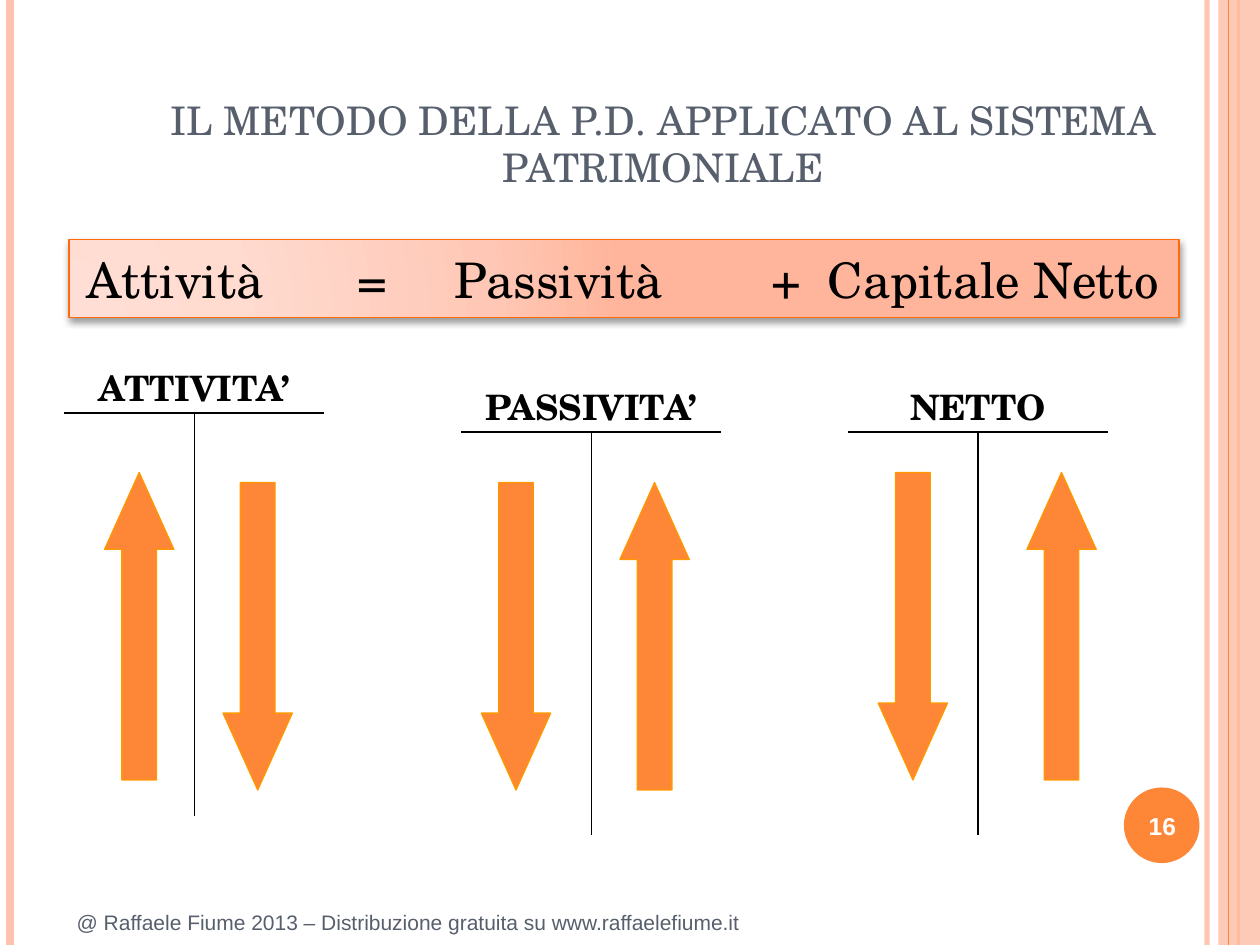
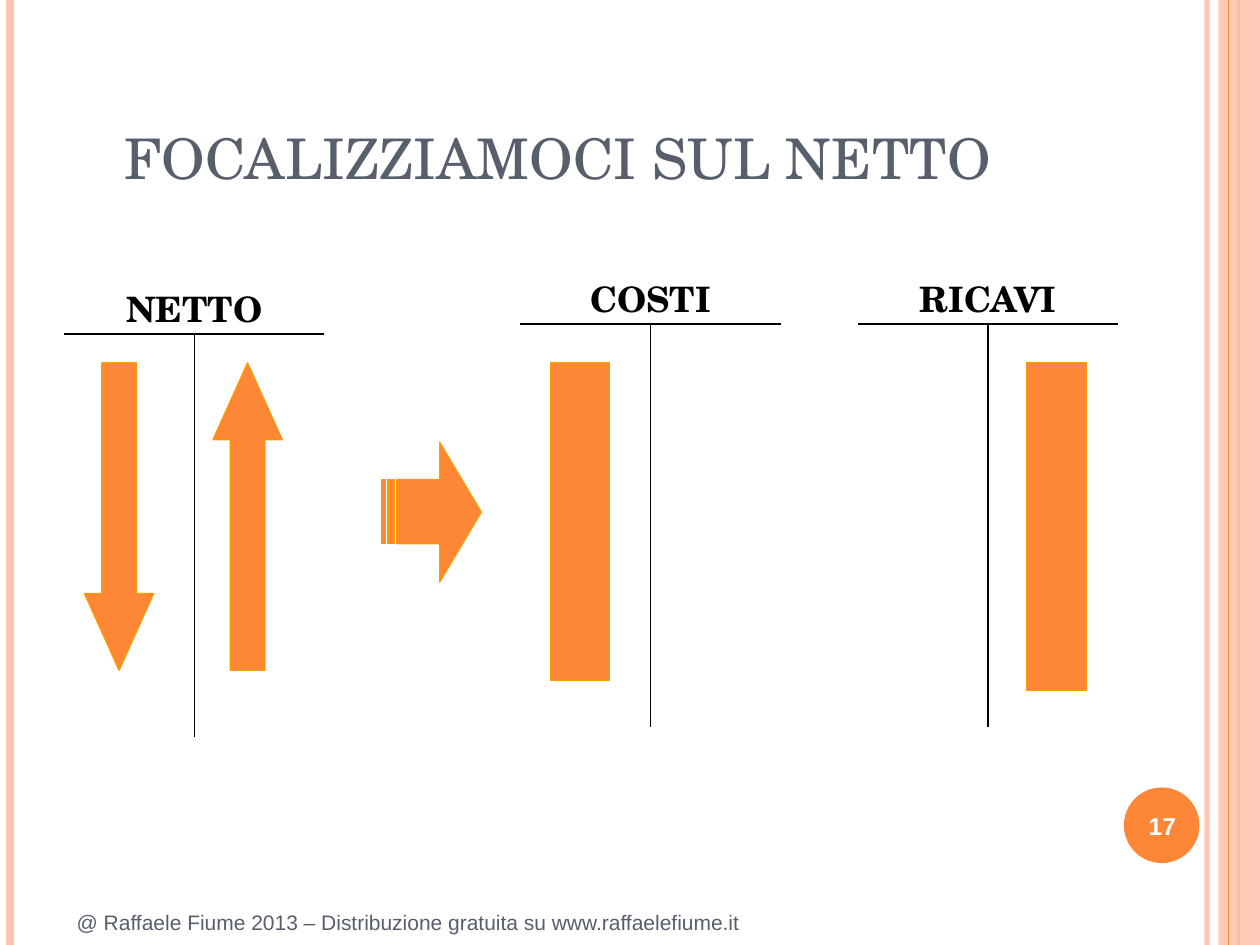
import pptx
import pptx.util
import pptx.dml.color
import pptx.enum.shapes
import pptx.enum.text
import pptx.oxml
import pptx.oxml.ns
from lxml import etree

RGB = pptx.dml.color.RGBColor
Pt = pptx.util.Pt
Form = pptx.enum.shapes.MSO_SHAPE
Align = pptx.enum.text.PP_ALIGN
Anchor = pptx.enum.text.MSO_ANCHOR
qn = pptx.oxml.ns.qn

PEACH = RGB(0xFE, 0xC3, 0xAE)
ORANGE = RGB(0xFE, 0x86, 0x37)
AMBER = RGB(0xFF, 0x99, 0x00)
FLAME = RGB(0xFF, 0x6B, 0x0A)
SLATE = RGB(0x57, 0x5F, 0x6D)
BLACK = RGB(0, 0, 0)
WHITE = RGB(255, 255, 255)
BLUSH = [(0, "FFDED5"), (30, "FFDBD0"), (75, "FFC8B6"), (100, "FFB59B")]

SERIF = "TeX Gyre Schola"
SANS = "Arial"
COLS, ROWS = 100, 75
BARE = "{2D5ABB26-0587-4C30-8999-92F81FD0307C}"
FOOT = "@ Raffaele Fiume 2013 – Distribuzione gratuita su www.raffaelefiume.it"
RULES = [(95.8, PEACH, 3, 93), (0.8, PEACH, 4.5, 100), (98.3, ORANGE, 1.5, 100)]


def node(tag, body="", **attrs):
    pairs = "".join(f' {key}="{val}"' for key, val in attrs.items())
    return pptx.oxml.parse_xml(f"<a:{tag} {pptx.oxml.ns.nsdecls('a')}{pairs}>{body}</a:{tag}>")


def fade(host, share):
    tint = host.find(".//" + qn("a:srgbClr"))
    tint.append(node("alpha", val=share * 1000))


class Deck:
    def __init__(self):
        self.prs = pptx.Presentation()
        self.prs.slide_width = pptx.util.Inches(10)
        self.prs.slide_height = pptx.util.Inches(7.5)
        self.slide = None

    def x(self, cols):
        return round(self.prs.slide_width * cols / COLS)

    def y(self, rows):
        return round(self.prs.slide_height * rows / ROWS)

    def area(self, left, top, wide, high):
        return self.x(left), self.y(top), self.x(wide), self.y(high)

    def style(self, frame, text, size, font, color, bold=False, align=Align.LEFT, anchor=Anchor.MIDDLE):
        frame.word_wrap = True
        frame.vertical_anchor = anchor
        frame.text = text
        para = frame.paragraphs[0]
        para.alignment = align
        for run in para.runs:
            run.font.size = Pt(size)
            run.font.name = font
            run.font.bold = bold
            run.font.color.rgb = color
        return para

    def text(self, spot, text, size, font, color, **look):
        box = self.slide.shapes.add_textbox(*self.area(*spot))
        self.style(box.text_frame, text, size, font, color, **look)

    def paint(self, shape, fill=ORANGE, line=AMBER):
        shape.shadow.inherit = False
        shape.fill.solid()
        shape.fill.fore_color.rgb = fill
        if line is None:
            shape.line.fill.background()
        else:
            shape.line.color.rgb = line
            shape.line.width = Pt(0.75)
        return shape

    def shape(self, form, spot, **look):
        return self.paint(self.slide.shapes.add_shape(form, *self.area(*spot)), **look)

    def rule(self, col, color, width, alpha=100):
        end = pptx.enum.shapes.MSO_CONNECTOR.STRAIGHT
        line = self.slide.shapes.add_connector(end, self.x(col), 0, self.x(col), self.y(ROWS))
        line.line.color.rgb = color
        line.line.width = Pt(width)
        if alpha < 100:
            fade(line.line._ln, alpha)
        etree.SubElement(line._element.spPr, qn("a:effectLst"))

    def page(self, title, size, number, align=Align.LEFT):
        self.slide = self.prs.slides.add_slide(self.prs.slide_layouts[6])
        for rule in RULES:
            self.rule(*rule)
        band = self.shape(Form.RECTANGLE, (96.7, 0, 3.3, ROWS), fill=PEACH, line=None)
        fade(band._element.spPr, 87)
        self.rule(97.5, ORANGE, 0.75)
        self.shape(Form.OVAL, (89.2, 62.5, 6, 6), line=None)
        self.text((5.1, 71.4, 81.9, 3.6), FOOT, 12, SANS, SLATE)
        self.text((8.9, 8.1, 87.5, 7.5), title, size, SERIF, SLATE, align=align, anchor=Anchor.BOTTOM)
        self.text((88.9, 62.7, 6.7, 5.7), str(number), 14, SANS, WHITE, bold=True, align=Align.CENTER)

    def banner(self, spot, parts, tabs):
        box = self.shape(Form.RECTANGLE, spot, line=FLAME)
        box.line.width = Pt(1)
        stops = "".join(f'<a:gs pos="{at * 1000}"><a:srgbClr val="{tint}"/></a:gs>' for at, tint in BLUSH)
        focus = '<a:fillToRect l="5000" t="100000" r="120000" b="10000"/>'
        blend = node("gradFill", f'<a:gsLst>{stops}</a:gsLst><a:path path="circle">{focus}</a:path>', rotWithShape=1)
        props = box._element.spPr
        props.replace(props.find(qn("a:solidFill")), blend)
        shade = node("outerShdw", '<a:srgbClr val="000000"><a:alpha val="40000"/></a:srgbClr>',
                     blurRad=Pt(4), dist=Pt(2), dir=5400000, rotWithShape=0)
        props.find(qn("a:effectLst")).append(shade)
        frame = box.text_frame
        frame.margin_left = self.x(1.4)
        para = self.style(frame, "\t".join(parts), 28, SERIF, BLACK)
        marks = "".join(f'<a:tab pos="{self.x(tab)}" algn="l"/>' for tab in tabs)
        para._p.get_or_add_pPr().append(node("tabLst", marks))

    def edge(self, cell, sides):
        cell.fill.background()
        props = cell._tc.get_or_add_tcPr()
        for at, side in enumerate(sides):
            ink = '<a:solidFill><a:srgbClr val="000000"/></a:solidFill>'
            props.insert(at, node("ln" + side, ink, w=Pt(1)))

    def ledger(self, left, top, name):
        table = self.slide.shapes.add_table(2, 2, *self.area(left, top, 20.66, 36.7)).table
        table._tbl.tblPr.find(qn("a:tableStyleId")).text = BARE
        table.first_row = table.horz_banding = False
        for col in table.columns:
            col.width = self.x(10.33)
        for row, high in zip(table.rows, (4.7, 32)):
            row.height = self.y(high)
        head = table.cell(0, 0)
        head.merge(table.cell(0, 1))
        for spot, sides in {(0, 0): "B", (0, 1): "B", (1, 0): "RT", (1, 1): "LT"}.items():
            self.edge(table.cell(*spot), sides)
        para = self.style(head.text_frame, name, 20, SERIF, BLACK, bold=True, align=Align.CENTER, anchor=Anchor.TOP)
        para.space_before = Pt(6)

    def arrow(self, left, top, down=False):
        arrow = self.shape(Form.UP_ARROW, (left, top, 5.5, 24.4))
        arrow.adjustments[0] = 0.5
        arrow.adjustments[1] = 1.11
        arrow.rotation = 180 if down else 0

    def outline(self, rings):
        first, *rest = [[(self.x(col), self.y(row)) for col, row in ring] for ring in rings]
        draft = self.slide.shapes.build_freeform(*first[0])
        draft.add_line_segments(first[1:], close=True)
        for ring in rest:
            draft.move_to(*ring[0])
            draft.add_line_segments(ring[1:], close=True)
        self.paint(draft.convert_to_shape())

    def striped(self, top, low):
        mid = (top + low) / 2
        high, deep = mid - 2.6, mid + 2.5
        head = [(34.9, top), (34.9, high), (31.5, high), (31.5, deep),
                (34.9, deep), (34.9, low), (38.2, mid)]
        bars = [[(a, high), (a, deep), (b, deep), (b, high)] for a, b in ((30.8, 31.3), (30.3, 30.6))]
        self.outline([head, *bars])


def main():
    deck = Deck()

    deck.page("IL METODO DELLA P.D. APPLICATO AL SISTEMA PATRIMONIALE", 22.5, 16, Align.CENTER)
    deck.banner((5.5, 19, 88.1, 6.2), ["Attività", "=", "Passività", "+", "Capitale Netto"],
                (21.5, 29.2, 54.3, 58.8))
    for left, top, name in ((5.1, 28.1, "ATTIVITA’"), (36.6, 29.6, "PASSIVITA’"), (67.3, 29.6, "NETTO")):
        deck.ledger(left, top, name)
    for top, rise, fall in ((37.5, 8.3, 69.7), (38.3, 49.2, 17.7), (37.5, 81.5, None), (38.3, None, 38.2)):
        if rise:
            deck.arrow(rise, top)
        if fall:
            deck.arrow(fall, top, down=True)

    deck.page("FOCALIZZIAMOCI SUL NETTO", 32, 17)
    for left, top, name in ((5.1, 21.8, "NETTO"), (41.3, 21, "COSTI"), (68.1, 21, "RICAVI")):
        deck.ledger(left, top, name)
    deck.arrow(16.9, 28.8)
    deck.arrow(6.7, 28.8, down=True)
    deck.striped(35.1, 46.2)
    for left, high in ((43.7, 25.2), (81.5, 26)):
        deck.shape(Form.RECTANGLE, (left, 28.8, 4.7, high))

    deck.prs.save("out.pptx")


if __name__ == "__main__":
    main()
